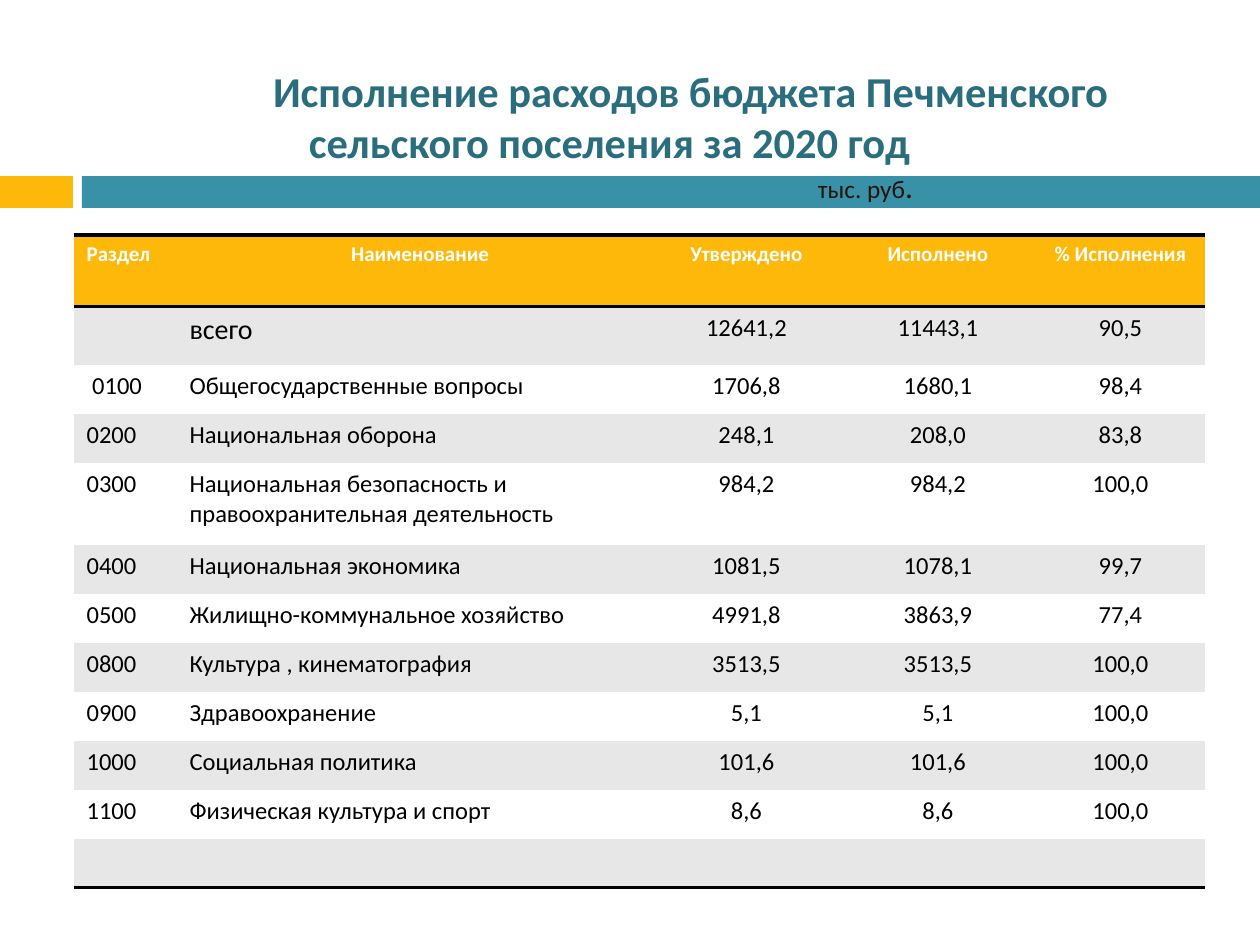
import lxml.etree
import pptx
import pptx.dml.color
import pptx.enum.shapes
import pptx.enum.text
import pptx.oxml.ns
import pptx.util

ALIGN = pptx.enum.text.PP_ALIGN
PLAIN_TABLE = "{2D5ABB26-0587-4C30-8999-92F81FD0307C}"


def px(count):
    return pptx.util.Emu(round(count * 914400 / 126))


def paint(target, color):
    """Colour a font, or give a shape or cell a solid fill."""
    if hasattr(target, "fill") and not hasattr(target, "bold"):
        target.fill.solid()
        target = target.fill.fore_color
    else:
        target = target.color
    target.rgb = pptx.dml.color.RGBColor.from_string(color)


deck = pptx.Presentation()
deck.slide_width, deck.slide_height = px(1260), px(945)
page = deck.slides.add_slide(deck.slide_layouts[5])

# Band below the title
for left, width, color in [(0, 73, "FEB80A"), (82, 1178, "3891A7")]:
    bar = page.shapes.add_shape(
        pptx.enum.shapes.MSO_SHAPE.RECTANGLE, px(left), px(176), px(width), px(32))
    bar.shadow.inherit = False
    bar.line.fill.background()
    paint(bar, color)

# Title with the unit of measure, in front of the band
title = page.shapes.title
page.shapes._spTree.append(title._element)
title.left, title.top, title.width, title.height = px(44), px(76), px(1131), px(118)
frame = title.text_frame
frame.word_wrap = True
frame.auto_size = pptx.enum.text.MSO_AUTO_SIZE.NONE
frame.vertical_anchor = pptx.enum.text.MSO_ANCHOR.MIDDLE

heading = frame.paragraphs[0]
unit = frame.add_paragraph()
heading.text = "Исполнение расходов бюджета Печменского сельского поселения за 2020 год"
heading._p.get_or_add_pPr().set("indent", str(px(162)))
unit._p.get_or_add_pPr().set("marL", str(px(512)))
unit.add_run().text = "тыс. руб"
unit.add_run().text = "."
for para in (heading, unit):
    para.alignment = ALIGN.CENTER
    para.space_before = pptx.util.Pt(0)
spans = [*heading.runs, *unit.runs]
styles = [(24.3, True, "2A6D7D"), (14.4, False, "28140E"), (18, False, "28140E")]
for span, (size, bold, color) in zip(spans, styles):
    span.font.name = "Calibri"
    span.font.size = pptx.util.Pt(size)
    span.font.bold = bold
    paint(span.font, color)

# Budget table
rows = [
    ("Раздел", "Наименование", "Утверждено", "Исполнено", "% Исполнения"),
    ("", "всего", "12641,2", "11443,1", "90,5"),
    (" 0100", "Общегосударственные вопросы", "1706,8", "1680,1", "98,4"),
    ("0200", "Национальная оборона", "248,1", "208,0", "83,8"),
    ("0300", "Национальная безопасность и правоохранительная деятельность",
     "984,2", "984,2", "100,0"),
    ("0400", "Национальная экономика", "1081,5", "1078,1", "99,7"),
    ("0500", "Жилищно-коммунальное хозяйство", "4991,8", "3863,9", "77,4"),
    ("0800", "Культура , кинематография", "3513,5", "3513,5", "100,0"),
    ("0900", "Здравоохранение", "5,1", "5,1", "100,0"),
    ("1000", "Социальная политика", "101,6", "101,6", "100,0"),
    ("1100", "Физическая культура и спорт", "8,6", "8,6", "100,0"),
    ("", "", "", "", ""),
]
widths = [103, 476, 187, 196, 169]
heights = [72, 58, 49, 49, 82] + [49] * 7
last = len(rows) - 1
table = page.shapes.add_table(
    len(rows), len(widths), px(74), px(235), px(sum(widths)), px(sum(heights))).table
table._tbl.tblPr.find(pptx.oxml.ns.qn("a:tableStyleId")).text = PLAIN_TABLE
for column, width in zip(table.columns, widths):
    column.width = px(width)

for r, (values, height) in enumerate(zip(rows, heights)):
    table.rows[r].height = px(height)
    header = r == 0
    edges = ["lnT", "lnB"] if header else ["lnB"] if r == last else []
    for c, value in enumerate(values):
        cell = table.cell(r, c)
        # Black rules around the header and under the last row
        for edge in edges:
            cell._tc.get_or_add_tcPr().append(pptx.oxml.parse_xml(
                f'<a:{edge} {pptx.oxml.ns.nsdecls("a")} w="25400"><a:solidFill>'
                f'<a:srgbClr val="000000"/></a:solidFill></a:{edge}>'))
        paint(cell, "FEB80A" if header else "E7E7E7" if r % 2 else "FFFFFF")
        para = cell.text_frame.paragraphs[0]
        if not value:
            # Keeps an empty cell from stretching its row
            lxml.etree.SubElement(para._p, pptx.oxml.ns.qn("a:endParaRPr")).set("sz", "1400")
            continue
        para.text = value
        centred = c > 1 or (header and c == 1)
        para.alignment = ALIGN.CENTER if centred else ALIGN.LEFT
        font = para.runs[0].font
        font.name = "Calibri"
        font.size = pptx.util.Pt(12 if header else 16 if value == "всего" else 14)
        font.bold = header
        paint(font, "FFFFFF" if header else "000000")
table.cell(0, 1).margin_left = px(23)

deck.save("out.pptx")
